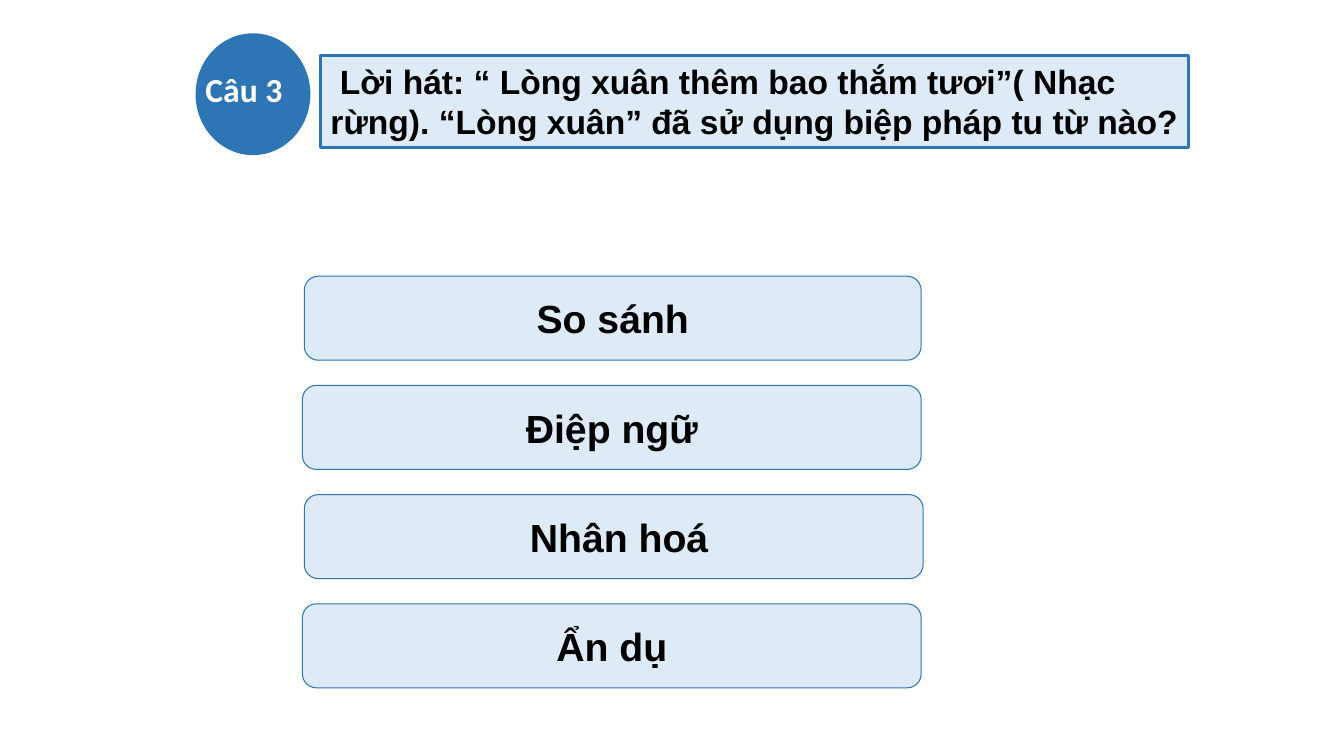
from pptx import Presentation
from pptx.dml.color import RGBColor
from pptx.enum.shapes import MSO_SHAPE
from pptx.enum.text import MSO_ANCHOR, PP_ALIGN
from pptx.util import Pt

BLUE = RGBColor(0x2E, 0x75, 0xB6)
PALE_BLUE = RGBColor(0xDE, 0xEB, 0xF7)
BLACK = RGBColor(0x00, 0x00, 0x00)
WHITE = RGBColor(0xFF, 0xFF, 0xFF)

RECTANGLE = MSO_SHAPE.RECTANGLE
ROUNDED = MSO_SHAPE.ROUNDED_RECTANGLE
OVAL = MSO_SHAPE.OVAL
LEFT, CENTER = PP_ALIGN.LEFT, PP_ALIGN.CENTER
TOP, MIDDLE = MSO_ANCHOR.TOP, MSO_ANCHOR.MIDDLE

presentation = Presentation()
presentation.slide_width = Pt(960)
presentation.slide_height = Pt(540)
slide = presentation.slides.add_slide(presentation.slide_layouts[6])


def add_filled_shape(kind, left, top, width, height, fill, line_width=None):
    """Add a shadowless shape; it has no outline unless line_width is given."""
    shape = slide.shapes.add_shape(kind, Pt(left), Pt(top), Pt(width), Pt(height))
    shape.shadow.inherit = False
    shape.fill.solid()
    shape.fill.fore_color.rgb = fill
    if line_width is None:
        shape.line.fill.background()
    else:
        shape.line.color.rgb = BLUE
        shape.line.width = Pt(line_width)
    return shape


def write_text(shape, text, size=24, font="Arial", color=BLACK,
               align=LEFT, anchor=TOP, wrap=True):
    frame = shape.text_frame
    frame.word_wrap = wrap
    frame.vertical_anchor = anchor
    paragraph = frame.paragraphs[0]
    paragraph.alignment = align
    run = paragraph.add_run()
    run.text = text
    run.font.name = font
    run.font.size = Pt(size)
    run.font.bold = True
    run.font.color.rgb = color


# Answers
ANSWER_TOP, ANSWER_STEP, ANSWER_HEIGHT = 197.3, 78, 60
answers = [
    ("So sánh", 217.4, 440.6),
    ("Điệp ngữ", 216, 442),
    (" Nhân hoá", 217.4, 442),
    ("Ẩn dụ", 216, 442),
]
for index, (answer, left, width) in enumerate(answers):
    answer_box = add_filled_shape(ROUNDED, left, ANSWER_TOP + index * ANSWER_STEP,
                                  width, ANSWER_HEIGHT, PALE_BLUE, line_width=0.75)
    write_text(answer_box, answer, size=28, align=CENTER, anchor=MIDDLE, wrap=False)

# Question
question_box = add_filled_shape(RECTANGLE, 229, 39.6, 620, 65.5, PALE_BLUE, line_width=2.25)
write_text(question_box, " Lời hát: “ Lòng xuân thêm bao thắm tươi”( Nhạc rừng). "
                         "“Lòng xuân” đã sử dụng biệp pháp tu từ nào?")

# Question number
add_filled_shape(OVAL, 139.7, 23.8, 82, 87, BLUE)
number_label = slide.shapes.add_textbox(Pt(139.7), Pt(46), Pt(89.3), Pt(36))
write_text(number_label, "Câu 3", font="Calibri", color=WHITE)

presentation.save("out.pptx")
